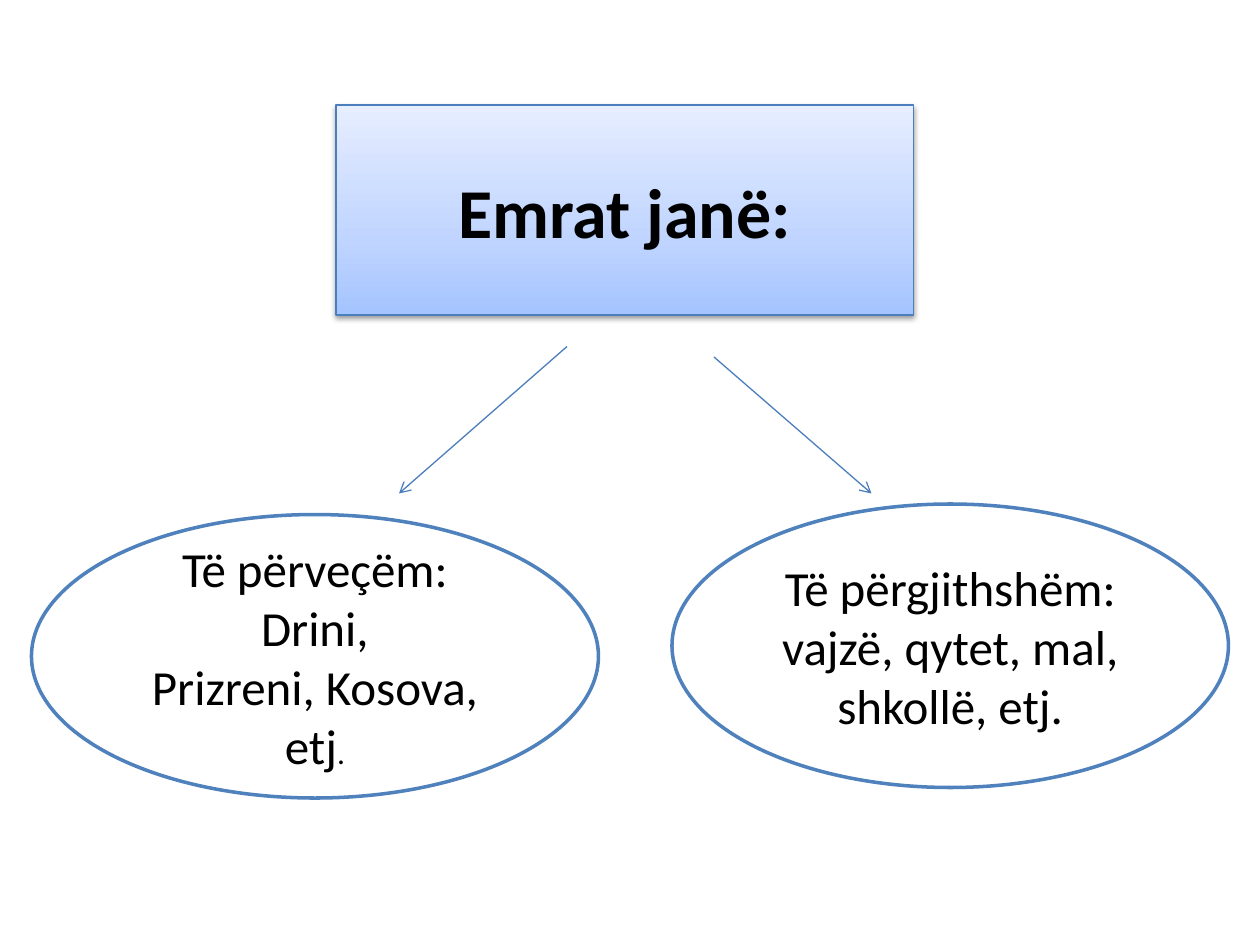
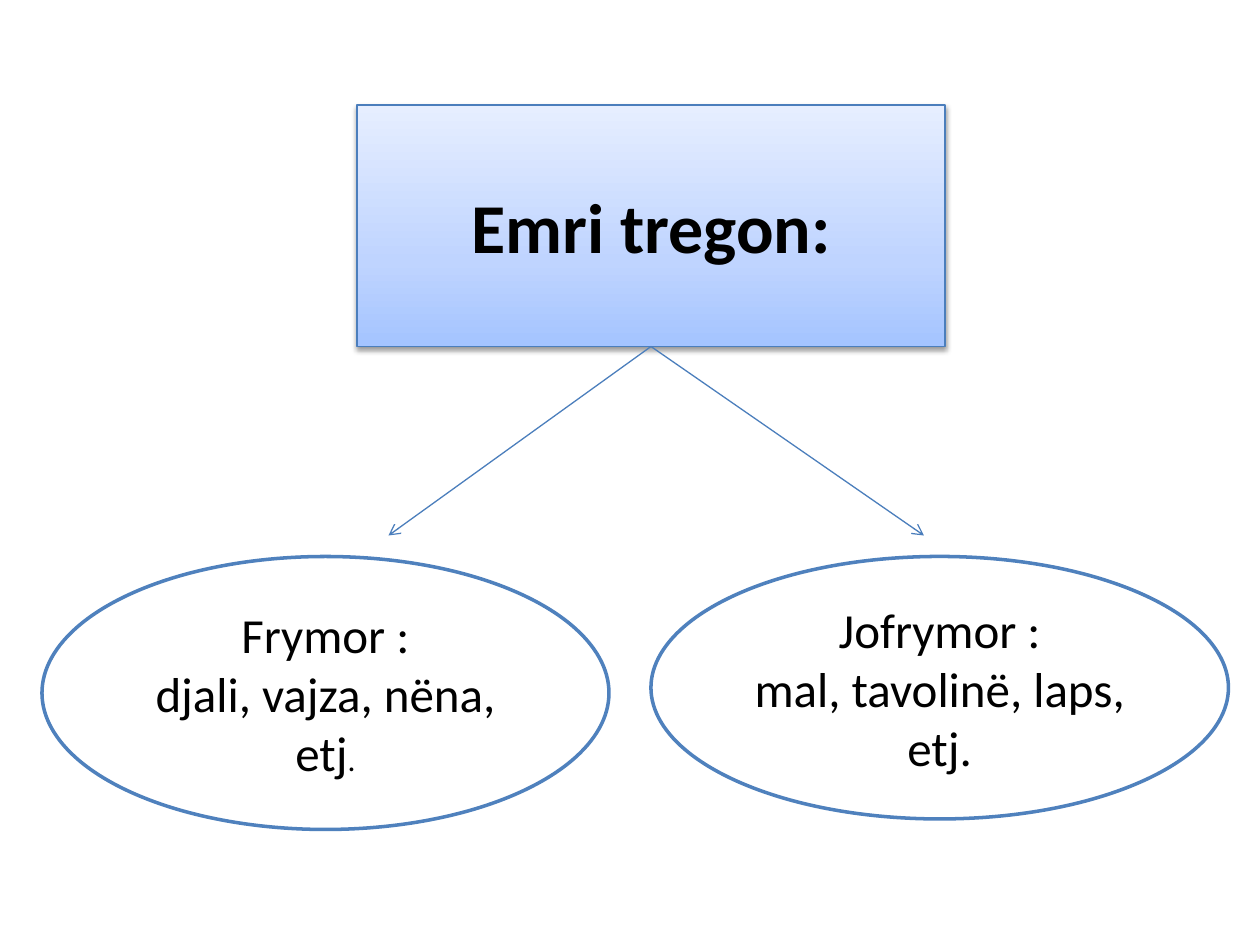
from copy import deepcopy
from dataclasses import dataclass

from lxml import etree
from pptx import Presentation
from pptx.dml.color import RGBColor
from pptx.enum.shapes import MSO_CONNECTOR, MSO_SHAPE
from pptx.enum.text import MSO_ANCHOR, PP_ALIGN
from pptx.oxml.ns import qn
from pptx.util import Inches, Pt

RECTANGLE, OVAL = MSO_SHAPE.RECTANGLE, MSO_SHAPE.OVAL
STRAIGHT = MSO_CONNECTOR.STRAIGHT
CENTER, MIDDLE = PP_ALIGN.CENTER, MSO_ANCHOR.MIDDLE


@dataclass(frozen=True)
class Theme:
    font: str = "Calibri"
    text: RGBColor = RGBColor.from_string("000000")
    oval_fill: RGBColor = RGBColor.from_string("FFFFFF")
    oval_line: RGBColor = RGBColor.from_string("4F81BD")
    thin_line: RGBColor = RGBColor.from_string("4B7EBC")
    gradient: tuple = ((0, "A4C4FF"), (0.35, "BFD4FF"), (1, "E6EEFF"))
    title_size: int = 40
    body_size: int = 28
    small_size: int = 18
    oval_width: float = 2
    thin_width: float = 0.75


theme = Theme()
SLIDE_WIDTH, SLIDE_HEIGHT = Inches(10), Inches(7.5)
COLUMNS, ROWS = 120, 90
CELL = SLIDE_WIDTH // COLUMNS  # cells are square: SLIDE_HEIGHT / ROWS is the same

# Boxes are (column, row, columns, rows); arrows are (from column, row, to column, row).
# Each paragraph is a list of (text, size) runs.
BODY, SMALL = theme.body_size, theme.small_size
diagrams = [
    {
        "title": ("Emrat janë:", (32, 10, 55, 20)),
        "ovals": [
            ((3, 49, 54, 27), [
                [("Të përveçëm:", BODY)],
                [("Drini,", BODY)],
                [("Prizreni, Kosova, etj", BODY), (".", SMALL)],
            ]),
            ((64, 48, 53, 27), [
                [("Të përgjithshëm:", BODY)],
                [("vajzë, qytet, mal,", BODY)],
                [("shkollë, etj.", BODY)],
            ]),
        ],
        "arrows": [(54, 33, 38, 47), (68, 34, 83, 47)],
    },
    {
        "title": ("Emri tregon:", (34, 10, 56, 23)),
        "ovals": [
            ((4, 53, 54, 26), [
                [("Frymor :", BODY)],
                [("djali, vajza, nëna,", BODY)],
                [("etj", BODY), (".", SMALL)],
            ]),
            ((62, 53, 55, 25), [
                [("Jofrymor :", BODY)],
                [("mal, tavolinë, laps,", BODY)],
                [("etj.", BODY)],
            ]),
        ],
        "arrows": [(62, 33, 37, 51), (62, 33, 88, 51)],
    },
]


def add_box(slide, preset, box, paragraphs, bold=False):
    """Add a shape on the grid with centred text, leaving fill and line to the caller."""
    shape = slide.shapes.add_shape(preset, *(CELL * cells for cells in box))
    shape.shadow.inherit = False
    frame = shape.text_frame
    frame.word_wrap = True
    frame.vertical_anchor = MIDDLE
    for index, runs in enumerate(paragraphs):
        paragraph = frame.add_paragraph() if index else frame.paragraphs[0]
        paragraph.alignment = CENTER
        for text, size in runs:
            run = paragraph.add_run()
            run.text = text
            run.font.name = theme.font
            run.font.size = Pt(size)
            run.font.bold = bold
            run.font.color.rgb = theme.text
    return shape


def style_title_box(shape):
    """Give the box its three-stop gradient, thin outline and soft shadow below."""
    shape.fill.gradient()
    shape.fill.gradient_angle = 90
    properties = shape.element.spPr
    stop_list = properties.find(qn("a:gradFill")).find(qn("a:gsLst"))
    stop_list.insert(1, deepcopy(stop_list[0]))
    for stop, (position, color) in zip(shape.fill.gradient_stops, theme.gradient):
        stop.position = position
        stop.color.rgb = RGBColor.from_string(color)
    shape.line.color.rgb = theme.thin_line
    shape.line.width = Pt(theme.thin_width)
    shadow = etree.SubElement(
        properties.find(qn("a:effectLst")), qn("a:outerShdw"),
        blurRad=str(Pt(3.1)), dist=str(Pt(1.6)), dir="5400000", rotWithShape="0")
    shadow_color = etree.SubElement(shadow, qn("a:srgbClr"), val="000000")
    etree.SubElement(shadow_color, qn("a:alpha"), val="38000")


presentation = Presentation()
presentation.slide_width, presentation.slide_height = SLIDE_WIDTH, SLIDE_HEIGHT
blank_layout = presentation.slide_layouts[6]

for diagram in diagrams:
    slide = presentation.slides.add_slide(blank_layout)

    title, title_box = diagram["title"]
    style_title_box(
        add_box(slide, RECTANGLE, title_box, [[(title, theme.title_size)]], bold=True))

    for oval_box, paragraphs in diagram["ovals"]:
        oval = add_box(slide, OVAL, oval_box, paragraphs)
        oval.fill.solid()
        oval.fill.fore_color.rgb = theme.oval_fill
        oval.line.color.rgb = theme.oval_line
        oval.line.width = Pt(theme.oval_width)

    for ends in diagram["arrows"]:
        arrow = slide.shapes.add_connector(STRAIGHT, *(CELL * cells for cells in ends))
        arrow.line.color.rgb = theme.thin_line
        arrow.line.width = Pt(theme.thin_width)
        properties = arrow.element.spPr
        etree.SubElement(properties.find(qn("a:ln")), qn("a:tailEnd"), type="arrow")
        etree.SubElement(properties, qn("a:effectLst"))

presentation.save("out.pptx")
